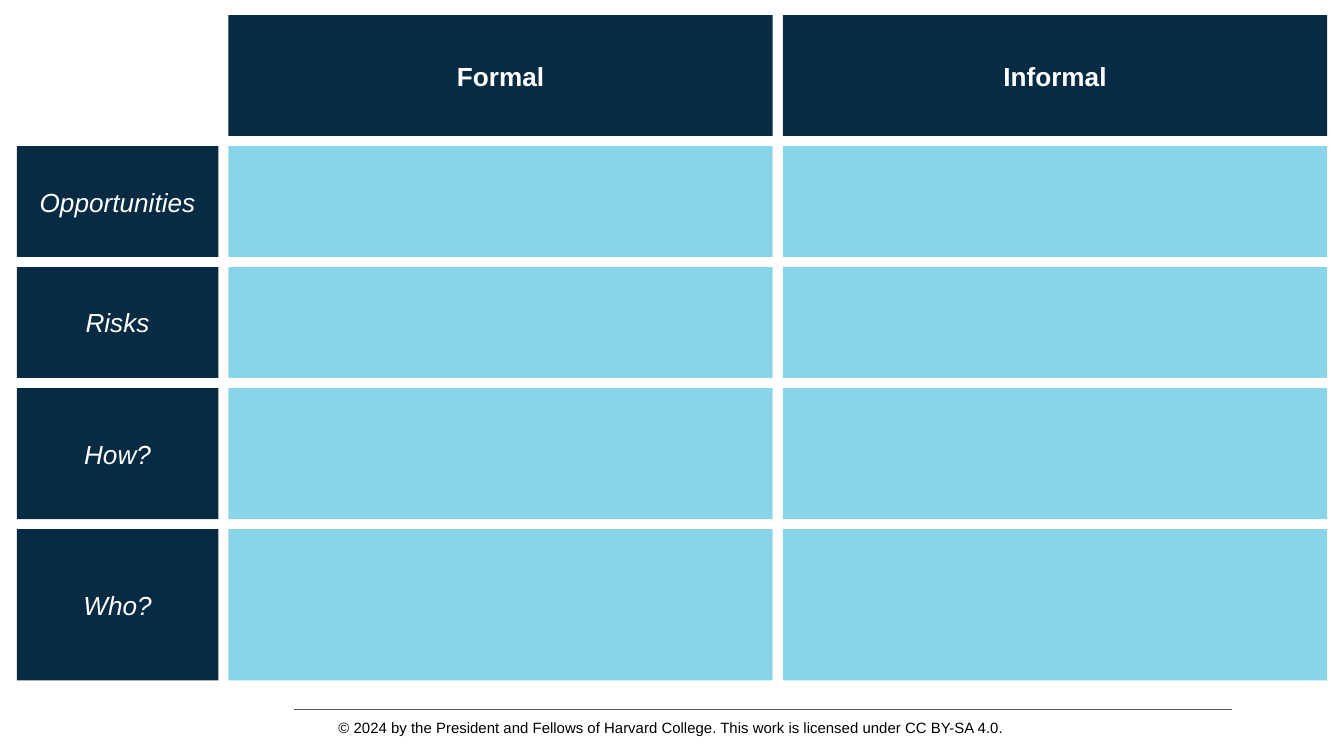
from dataclasses import dataclass

from pptx import Presentation
from pptx.dml.color import RGBColor as Color
from pptx.enum.shapes import MSO_CONNECTOR as Connector, MSO_SHAPE as Shape
from pptx.enum.text import MSO_ANCHOR as Anchor, MSO_AUTO_SIZE as AutoSize, PP_ALIGN as Align
from pptx.oxml.ns import qn
from pptx.slide import Slide
from pptx.text.text import TextFrame
from pptx.util import Inches, Pt


@dataclass(frozen=True)
class Theme:
    font: str = "Arial"
    navy: Color = Color.from_string("072B42")
    sky: Color = Color.from_string("89D4E8")
    white: Color = Color.from_string("FFFFFF")
    black: Color = Color.from_string("000000")
    rule: Color = Color.from_string("595959")
    label_size: float = 14
    footer_size: float = 8
    rule_width: float = 0.75


@dataclass(frozen=True)
class Track:
    start: int
    size: int


@dataclass(frozen=True)
class Cell:
    column: int
    row: int
    text: str = ""
    bold: bool = False
    italic: bool = False


THEME = Theme()
SLIDE_WIDTH = Inches(10)
SLIDE_HEIGHT = SLIDE_WIDTH * 9 // 16
UNIT = SLIDE_HEIGHT // 75
COLUMN_UNITS = [20, 54, 54]
ROW_UNITS = [12, 11, 11, 13, 15]
COLUMN_LABELS = ["Formal", "Informal"]
ROW_LABELS = ["Opportunities", "Risks", "How?", "Who?"]
FOOTER = (
    "© 2024 by the President and Fellows of Harvard College. "
    "This work is licensed under CC BY-SA 4.0."
)


def lay_out(start: int, units: list[int]) -> list[Track]:
    return [
        Track(start + (sum(units[:index]) + index) * UNIT, size * UNIT)
        for index, size in enumerate(units)
    ]


GRID_WIDTH = (sum(COLUMN_UNITS) + len(COLUMN_UNITS) - 1) * UNIT
COLUMNS = lay_out((SLIDE_WIDTH - GRID_WIDTH) // 2, COLUMN_UNITS)
ROWS = lay_out(UNIT * 3 // 2, ROW_UNITS)


def write_text(
    frame: TextFrame,
    text: str,
    *,
    size: float,
    color: Color,
    bold: bool = False,
    italic: bool = False,
    align: Align = Align.LEFT,
    anchor: Anchor = Anchor.TOP,
) -> None:
    frame.word_wrap = True
    frame.vertical_anchor = anchor
    paragraph = frame.paragraphs[0]
    paragraph.alignment = align
    run = paragraph.add_run()
    run.text = text
    font = run.font
    font.name, font.size = THEME.font, Pt(size)
    font.bold, font.italic = bold, italic
    font.color.rgb = color


def draw_cell(slide: Slide, cell: Cell) -> None:
    column, row = COLUMNS[cell.column], ROWS[cell.row]
    shape = slide.shapes.add_shape(
        Shape.RECTANGLE, column.start, row.start, column.size, row.size
    )
    shape.shadow.inherit = False
    shape.fill.solid()
    shape.fill.fore_color.rgb = THEME.navy if cell.text else THEME.sky
    shape.line.fill.background()
    if cell.text:
        write_text(
            shape.text_frame, cell.text, size=THEME.label_size, color=THEME.white,
            bold=cell.bold, italic=cell.italic, align=Align.CENTER, anchor=Anchor.MIDDLE,
        )


def draw_footer(slide: Slide) -> None:
    right, rule_top = Inches(9.17), Inches(5.28)
    rule = slide.shapes.add_connector(
        Connector.STRAIGHT, Inches(2.19), rule_top, right, rule_top
    )
    rule.line.color.rgb = THEME.rule
    rule.line.width = Pt(THEME.rule_width)
    properties = rule._element.spPr
    properties.append(properties.makeelement(qn("a:effectLst"), {}))

    left = Inches(2.42)
    box = slide.shapes.add_textbox(left, Inches(5.3), right - left, Inches(0.24))
    write_text(box.text_frame, FOOTER, size=THEME.footer_size, color=THEME.black)
    box.text_frame.auto_size = AutoSize.SHAPE_TO_FIT_TEXT


def main() -> None:
    presentation = Presentation()
    presentation.slide_width, presentation.slide_height = SLIDE_WIDTH, SLIDE_HEIGHT
    slide = presentation.slides.add_slide(presentation.slide_layouts[6])

    draw_footer(slide)
    for column, label in enumerate(COLUMN_LABELS, start=1):
        draw_cell(slide, Cell(column, 0, label, bold=True))
    for row, label in enumerate(ROW_LABELS, start=1):
        draw_cell(slide, Cell(0, row, label, italic=True))
        for column in range(1, len(COLUMNS)):
            draw_cell(slide, Cell(column, row))

    presentation.save("out.pptx")


if __name__ == "__main__":
    main()
